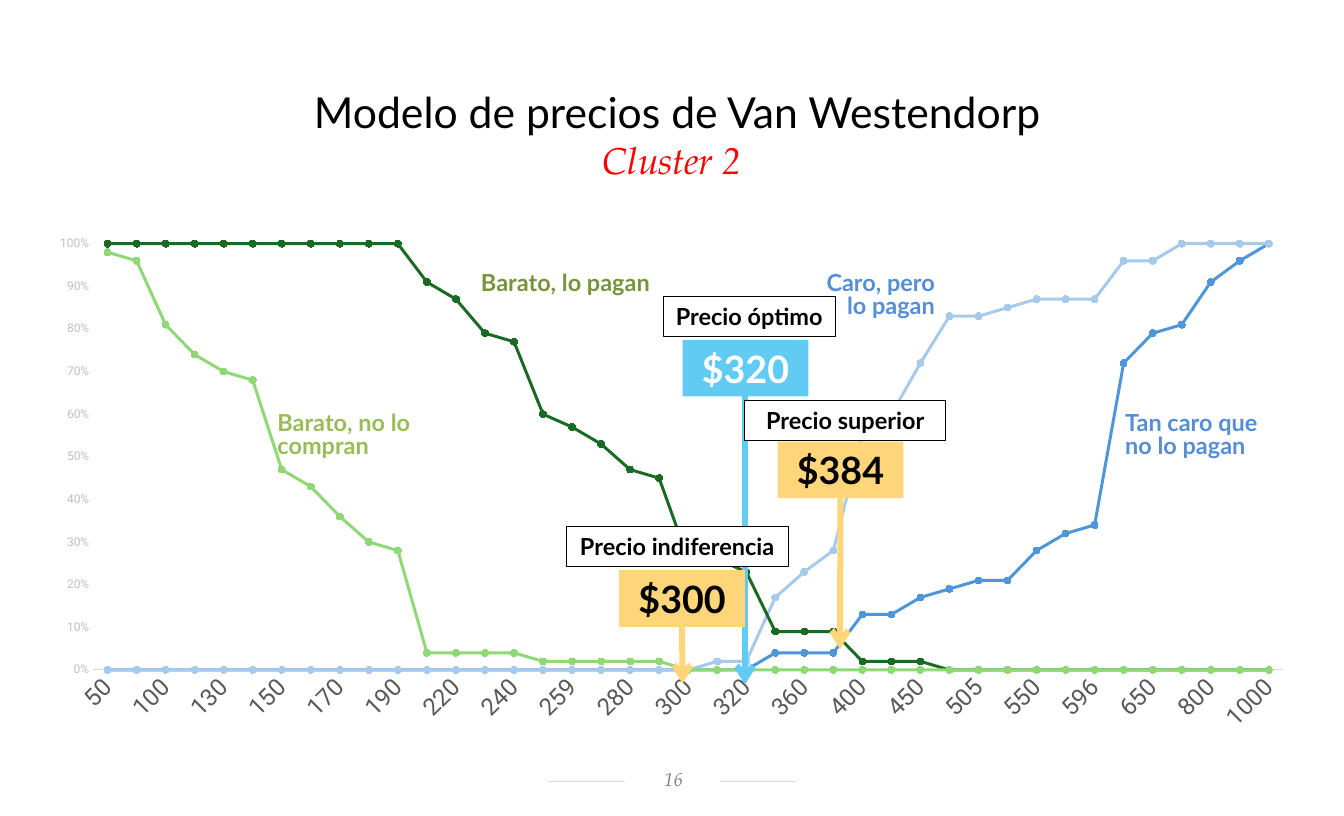
"""Build the Van Westendorp price model slide for cluster 2."""
import pptx
import pptx.chart.data
import pptx.dml.color
import pptx.enum.chart
import pptx.enum.shapes
import pptx.enum.text
import pptx.oxml
import pptx.oxml.ns
import pptx.util
from pptx.util import Inches

RGB = pptx.dml.color.RGBColor
BLACK = RGB(0x00, 0x00, 0x00)
WHITE = RGB(0xFF, 0xFF, 0xFF)
RED = RGB(0xFF, 0x00, 0x00)
GRAY = RGB(0x80, 0x80, 0x80)
RULE = RGB(0xD9, 0xD9, 0xD9)
CAT_TEXT = RGB(0x59, 0x59, 0x59)
VAL_TEXT = RGB(0xBF, 0xBF, 0xBF)
CYAN = RGB(0x61, 0xCB, 0xF4)
AMBER = RGB(0xFF, 0xD5, 0x79)
LABEL_BLUE = RGB(0x55, 0x8E, 0xD5)
LABEL_LIME = RGB(0x9B, 0xBB, 0x59)
LABEL_OLIVE = RGB(0x77, 0x93, 0x3C)
BLUE = RGB(0x4E, 0x95, 0xD9)
PALE_BLUE = RGB(0xA6, 0xCA, 0xEC)
DARK_GREEN = RGB(0x19, 0x6B, 0x24)
LIGHT_GREEN = RGB(0x8E, 0xD9, 0x73)

SERIF = "TeX Gyre Pagella"
ALIGN = pptx.enum.text.PP_ALIGN
ANCHOR = pptx.enum.text.MSO_ANCHOR

CHART_BOX = (0.36, 2.36, 13.28, 5.37)
PLOT_BOX = (0.97, 2.54, 12.4, 4.44)
PRICES = [50, 80, 100, *range(120, 201, 10), 220, 230, 240, 250, 259, 260, 280, 290,
          300, 305, 320, 350, 360, 380, 400, 420, 450, 500, 505, 520, 550, 580,
          596, 600, 650, 700, 800, 900, 1000]
CURVES = [
    ("Tan caro que no lo pagan", BLUE,
     [0] * 23 + [0.04] * 3 + [0.13, 0.13, 0.17, 0.19, 0.21, 0.21, 0.28, 0.32, 0.34,
                              0.72, 0.79, 0.81, 0.91, 0.96, 1]),
    ("Caro, pero lo pagan", PALE_BLUE,
     [0] * 21 + [0.02, 0.02, 0.17, 0.23, 0.28, 0.55, 0.6, 0.72, 0.83, 0.83, 0.85,
                 0.87, 0.87, 0.87, 0.96, 0.96] + [1] * 4),
    ("Barato, lo pagan", DARK_GREEN,
     [1] * 11 + [0.91, 0.87, 0.79, 0.77, 0.6, 0.57, 0.53, 0.47, 0.45, 0.26, 0.26,
                 0.23] + [0.09] * 3 + [0.02] * 3 + [0] * 12),
    ("Barato, no lo compran", LIGHT_GREEN,
     [0.98, 0.96, 0.81, 0.74, 0.7, 0.68, 0.47, 0.43, 0.36, 0.3, 0.28]
     + [0.04] * 4 + [0.02] * 5 + [0] * 21),
]


def set_font(font, size, color, name="Lato", bold=False, italic=False):
    """Apply size, colour, typeface and style to a font."""
    font.size, font.name = pptx.util.Pt(size), name
    font.bold, font.italic = bold, italic
    font.color.rgb = color


def write(sp, text, size, color, align=ALIGN.CENTER, spacing=None, wrap=True,
          grow=True, anchor=ANCHOR.TOP, insets=(0.12, 0.06, 0.12, 0.06), **style):
    """Fill a shape with one paragraph per line of text."""
    tf = sp.text_frame
    tf.text = text
    tf.word_wrap, tf.vertical_anchor = wrap, anchor
    if grow:
        tf.auto_size = pptx.enum.text.MSO_AUTO_SIZE.SHAPE_TO_FIT_TEXT
    (tf.margin_left, tf.margin_top,
     tf.margin_right, tf.margin_bottom) = map(Inches, insets)
    for p in tf.paragraphs:
        p.alignment = align
        if spacing:
            p.line_spacing = spacing
        set_font(p.font, size, color, **style)


def add_text(s, box, text, size, color, **options):
    """Add a text box."""
    sp = s.shapes.add_textbox(*map(Inches, box))
    write(sp, text, size, color, **options)


def add_curve_label(s, box, text, color, **options):
    """Add a bold, tightly spaced label beside a curve."""
    options = {"align": ALIGN.LEFT, **options}
    add_text(s, box, text, 17.6, color, spacing=0.8, bold=True, **options)


def add_box(s, box, fill, text, size, color, line=None, **options):
    """Add a filled rectangle with text."""
    sp = s.shapes.add_shape(pptx.enum.shapes.MSO_SHAPE.RECTANGLE, *map(Inches, box))
    sp.shadow.inherit = False
    sp.fill.solid()
    sp.fill.fore_color.rgb = fill
    if line is None:
        sp.line.fill.background()
    else:
        sp.line.color.rgb, sp.line.width = line, pptx.util.Pt(0.75)
    write(sp, text, size, color, **options)
    return sp


def add_price(s, left, top, text, fill, color=BLACK):
    """Add a large price tag."""
    return add_box(s, (left, top, 1.31, 0.59), fill, text, 28.2, color, bold=True)


def add_caption(s, left, top, width, text, wrap=False):
    """Add the outlined caption of a price tag."""
    add_box(s, (left, top, width, 0.42), WHITE, text, 17.6, BLACK, line=BLACK,
            wrap=wrap, bold=True)


def add_line(s, start, end, color, width, arrow=False, origin=None):
    """Add a straight line, optionally with an arrowhead and a joined start."""
    ln = s.shapes.add_connector(pptx.enum.shapes.MSO_CONNECTOR.STRAIGHT,
                                *map(Inches, start + end))
    ln.line.color.rgb, ln.line.width = color, pptx.util.Pt(width)
    if origin is not None:
        ln.begin_connect(origin, 2)
    if arrow:
        tail = pptx.oxml.parse_xml(
            f'<a:tailEnd {pptx.oxml.ns.nsdecls("a")} type="arrow"/>')
        ln.line._get_or_add_ln().append(tail)
    ln._element.spPr.append(
        pptx.oxml.parse_xml(f'<a:effectLst {pptx.oxml.ns.nsdecls("a")}/>'))


def style_axes(chart):
    """Style both axes, with every second price label slanted."""
    none = pptx.enum.chart.XL_TICK_MARK.NONE
    cat, val = chart.category_axis, chart.value_axis
    for axis, size, color in ((cat, 18, CAT_TEXT), (val, 9, VAL_TEXT)):
        axis.major_tick_mark = axis.minor_tick_mark = none
        axis.has_major_gridlines = False
        set_font(axis.tick_labels.font, size, color, "Roboto")
    cat.format.line.color.rgb = RULE
    cat.format.line.width = pptx.util.Pt(0.75)
    val.format.line.fill.background()
    val.minimum_scale, val.maximum_scale, val.major_unit = 0, 1, 0.1
    val.tick_labels.number_format = "0%"
    val.tick_labels.number_format_is_linked = False
    ax = cat._element
    ax.find(pptx.oxml.ns.qn("c:txPr")).bodyPr.set("rot", "-2700000")
    skip = pptx.oxml.parse_xml(
        f'<c:tickLblSkip {pptx.oxml.ns.nsdecls("c")} val="2"/>')
    ax.find(pptx.oxml.ns.qn("c:noMultiLvlLbl")).addprevious(skip)


def set_plot_area(chart):
    """Fix the inner plot area at PLOT_BOX within CHART_BOX."""
    left, top, width, height = CHART_BOX
    x, y, w, h = PLOT_BOX
    parts = {"x": (x - left) / width, "y": (y - top) / height,
             "w": w / width, "h": h / height}
    area = chart._chartSpace.chart.plotArea
    for old in area.findall(pptx.oxml.ns.qn("c:layout")):
        area.remove(old)
    sizes = "".join(f'<c:{k} val="{v:.4f}"/>' for k, v in parts.items())
    area.insert(0, pptx.oxml.parse_xml(
        f'<c:layout {pptx.oxml.ns.nsdecls("c")}><c:manualLayout>'
        '<c:layoutTarget val="inner"/><c:xMode val="edge"/><c:yMode val="edge"/>'
        f'{sizes}</c:manualLayout></c:layout>'))


def add_price_chart(s):
    """Add the line chart with the four acceptance curves."""
    data = pptx.chart.data.CategoryChartData(number_format="0%")
    data.categories = [str(price) for price in PRICES]
    for name, _, values in CURVES:
        data.add_series(name, values)
    chart = s.shapes.add_chart(pptx.enum.chart.XL_CHART_TYPE.LINE_MARKERS,
                               *map(Inches, CHART_BOX), data).chart
    chart.has_legend = chart.has_title = False
    set_font(chart.font, 10, BLACK, "Calibri")
    plot = chart.plots[0]
    plot.vary_by_categories = False
    for series, (_, color, _) in zip(plot.series, CURVES):
        series.smooth = False
        series.format.line.color.rgb = color
        series.format.line.width = pptx.util.Pt(2.25)
        marker = series.marker
        marker.style, marker.size = pptx.enum.chart.XL_MARKER_STYLE.CIRCLE, 5
        marker.format.fill.solid()
        marker.format.fill.fore_color.rgb = color
        marker.format.line.color.rgb = color
    style_axes(chart)
    set_plot_area(chart)


def main():
    """Build and save the slide."""
    prs = pptx.Presentation()
    prs.slide_width, prs.slide_height = Inches(14), Inches(8.5)
    s = prs.slides.add_slide(prs.slide_layouts[6])
    add_line(s, (5.71, 8.14), (8.29, 8.14), RULE, 0.5)
    add_price_chart(s)
    add_line(s, (7.76, 3.99), (7.76, 7.13), CYAN, 4.5, arrow=True)
    add_box(s, (6.51, 7.98, 0.99, 0.29), WHITE, "16", 14, GRAY, name=SERIF, italic=True,
            grow=False, anchor=ANCHOR.MIDDLE, insets=(0.12, 0.02, 0.1, 0.05))
    wide = (0.14, 0.07, 0.14, 0.07)
    add_text(s, (0, 0.82, 14, 0.68), " Modelo de precios de Van Westendorp", 32, BLACK,
             insets=wide)
    add_text(s, (0, 1.36, 14, 0.61), "Cluster 2", 28, RED, insets=wide, name=SERIF,
             italic=True)
    add_price(s, 7.11, 3.54, "$320", CYAN, WHITE)
    add_caption(s, 5.9, 5.48, 2.31, "Precio indiferencia")
    add_caption(s, 7.76, 4.17, 2.09, "Precio superior", wrap=True)
    add_caption(s, 6.91, 3.09, 1.79, "Precio óptimo")
    add_curve_label(s, (8.33, 2.79, 1.53, 0.59), "Caro, pero lo pagan", LABEL_BLUE,
                    align=ALIGN.RIGHT)
    upper = add_price(s, 8.1, 4.6, "$384", AMBER)
    lower = add_price(s, 6.45, 5.94, "$300", AMBER)
    add_line(s, (7.11, 6.53), (7.11, 7.12), AMBER, 4.5, arrow=True, origin=lower)
    add_line(s, (8.75, 5.19), (8.75, 6.76), AMBER, 4.5, arrow=True, origin=upper)
    add_curve_label(s, (2.77, 4.25, 1.63, 0.59), "Barato, no lo\ncompran", LABEL_LIME,
                    wrap=False)
    add_curve_label(s, (4.89, 2.79, 2.02, 0.36), "Barato, lo pagan", LABEL_OLIVE,
                    wrap=False)
    add_curve_label(s, (11.6, 4.25, 1.78, 0.59), "Tan caro que no lo pagan", LABEL_BLUE)
    prs.save("out.pptx")


if __name__ == "__main__":
    main()
